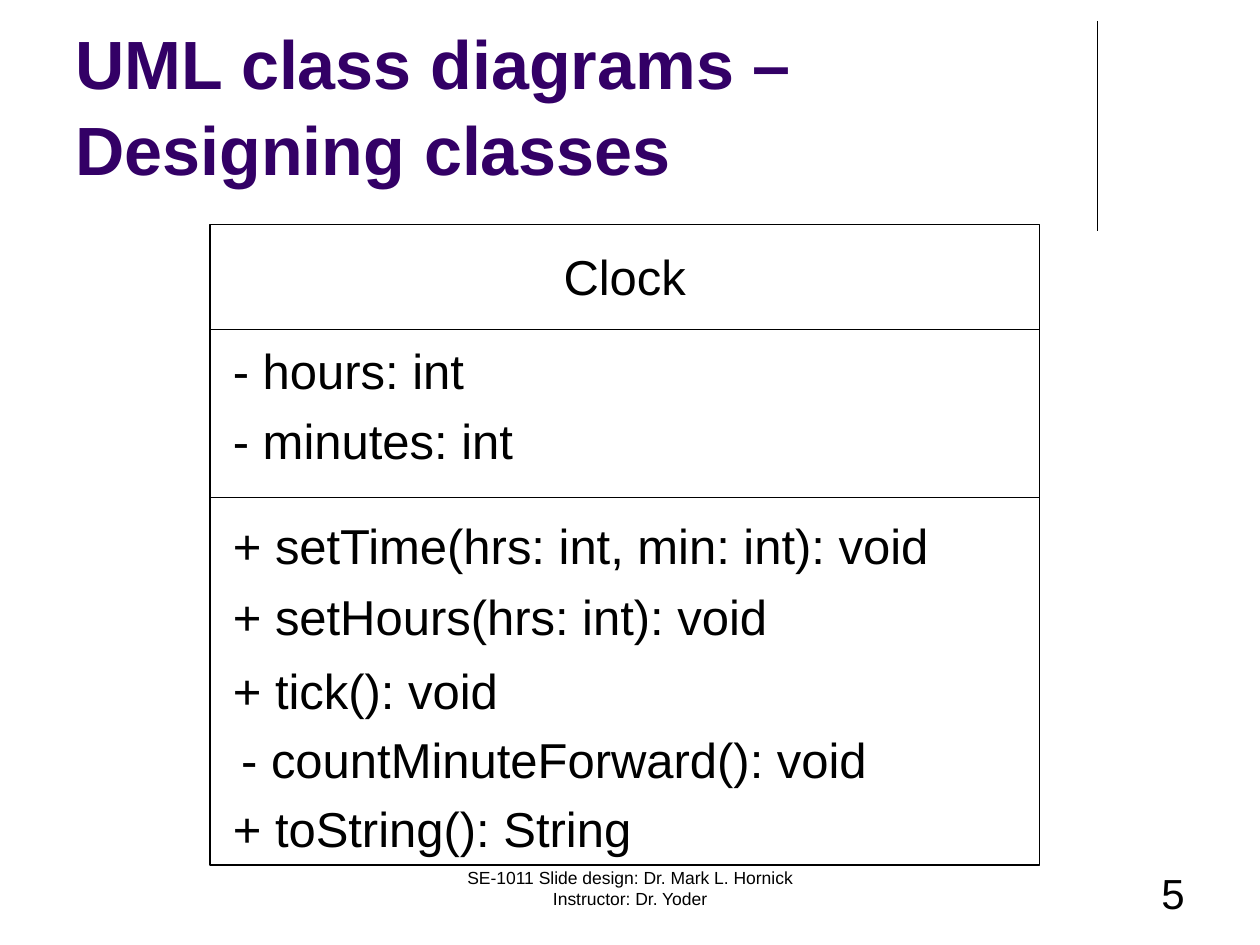
"""Build the slide that shows the UML class diagram of Clock."""
from dataclasses import dataclass

from lxml import etree
from pptx import Presentation
from pptx import util as u
from pptx.dml.color import RGBColor
from pptx.enum import shapes, text
from pptx.oxml.ns import qn


@dataclass(frozen=True)
class Theme:
    font: str = "Arial"
    ink: RGBColor = RGBColor(0, 0, 0)
    heading: RGBColor = RGBColor(0x33, 0, 0x66)
    title_size: int = 39
    member_size: int = 28
    number_size: int = 24
    footer_size: int = 10
    line_width: float = 0.75


THEME = Theme()
PX = u.Inches(1) // 120


def add_text(parent, words, left, top, width, height, size, align=text.PP_ALIGN.LEFT):
    box = parent.add_textbox(left * PX, top * PX, width * PX, height * PX)
    box.text_frame.word_wrap = True
    para = box.text_frame.paragraphs[0]
    para.text = words
    para.alignment = align
    para.font.name = THEME.font
    para.font.size = u.Pt(size)
    para.font.color.rgb = THEME.ink


def add_line(parent, x1, y1, x2, y2):
    line = parent.add_connector(
        shapes.MSO_CONNECTOR.STRAIGHT, x1 * PX, y1 * PX, x2 * PX, y2 * PX)
    line.line.color.rgb = THEME.ink
    line.line.width = u.Pt(THEME.line_width)
    etree.SubElement(line._element.spPr, qn("a:effectLst"))


deck = Presentation()
deck.slide_width, deck.slide_height = 1200 * PX, 900 * PX
page = deck.slides.add_slide(deck.slide_layouts[5])

add_line(page.shapes, 1045, 20, 1045, 220)

title = page.shapes.title
title.left, title.top, title.width, title.height = 60 * PX, 16 * PX, 990 * PX, 170 * PX
title.text_frame.auto_size = text.MSO_AUTO_SIZE.NONE
title.text_frame.vertical_anchor = text.MSO_ANCHOR.BOTTOM
title.text_frame.text = "UML class diagrams – Designing classes"
heading = title.text_frame.paragraphs[0]
heading.alignment = text.PP_ALIGN.LEFT
heading.line_spacing = 1.05
heading.font.name = THEME.font
heading.font.size = u.Pt(THEME.title_size)
heading.font.bold = True
heading.font.color.rgb = THEME.heading

add_text(page.shapes, "SE-1011 Slide design: Dr. Mark L. Hornick Instructor: Dr. Yoder",
         410, 820, 380, 60, THEME.footer_size, text.PP_ALIGN.CENTER)
add_text(page.shapes, "5", 860, 820, 280, 60, THEME.number_size, text.PP_ALIGN.RIGHT)

diagram = page.shapes.add_group_shape().shapes
frame = diagram.add_shape(
    shapes.MSO_SHAPE.RECTANGLE, 200 * PX, 214 * PX, 790 * PX, 610 * PX)
frame.shadow.inherit = False
frame.fill.background()
frame.line.color.rgb = THEME.ink
frame.line.width = u.Pt(THEME.line_width)
for divider in (314, 474):
    add_line(diagram, 200, divider, 990, divider)

add_text(diagram, "Clock", 505, 229, 180, 68, THEME.member_size, text.PP_ALIGN.CENTER)
members = [
    ("- hours: int", 210, 318, 390),
    ("- minutes: int", 210, 385, 390),
    ("+ setTime(hrs: int, min: int): void", 210, 485, 770),
    ("+ setHours(hrs: int): void", 210, 553, 770),
    ("+ tick(): void", 210, 623, 770),
    (" - countMinuteForward(): void", 205, 689, 770),
    ("+ toString(): String", 210, 755, 770),
]
for words, left, top, width in members:
    add_text(diagram, words, left, top, width, 68, THEME.member_size)

deck.save("out.pptx")
